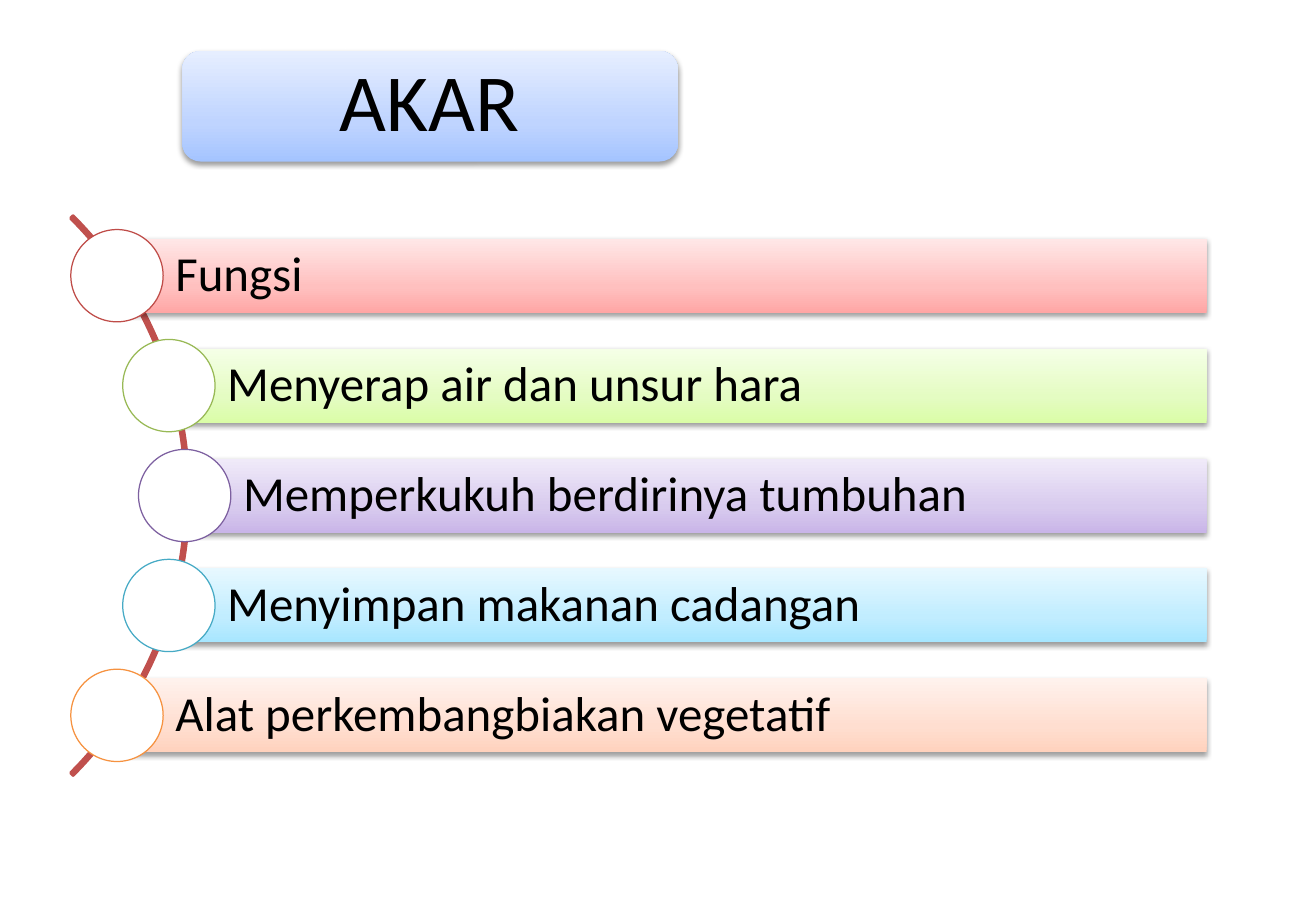
from math import sqrt

from lxml import etree
from pptx import Presentation
from pptx.dml.color import RGBColor
from pptx.enum.shapes import MSO_SHAPE
from pptx.enum.text import MSO_ANCHOR, MSO_AUTO_SIZE, PP_ALIGN
from pptx.util import Inches, Pt

RECT = MSO_SHAPE.RECTANGLE
ROUND = MSO_SHAPE.ROUNDED_RECTANGLE
OVAL = MSO_SHAPE.OVAL
ARC = MSO_SHAPE.BLOCK_ARC
MIDDLE = MSO_ANCHOR.MIDDLE
LEFT, CENTER = PP_ALIGN.LEFT, PP_ALIGN.CENTER
NS = 'xmlns:a="http://schemas.openxmlformats.org/drawingml/2006/main"'


def glow(shape, colors):
    """Give a shape a three-stop upward gradient, no line and a soft shadow."""
    stops = "".join(
        f'<a:gs pos="{pos}"><a:srgbClr val="{color}"/></a:gs>'
        for pos, color in zip((0, 35000, 100000), colors))
    props = shape._element.spPr
    props.append(etree.fromstring(
        f'<a:gradFill {NS} rotWithShape="1"><a:gsLst>{stops}</a:gsLst>'
        '<a:lin ang="16200000" scaled="0"/></a:gradFill>'))
    shape.line.fill.background()
    props.append(etree.fromstring(
        f'<a:effectLst {NS}><a:outerShdw blurRad="40000" dist="20000" '
        'dir="5400000" rotWithShape="0"><a:srgbClr val="000000">'
        '<a:alpha val="38000"/></a:srgbClr></a:outerShdw></a:effectLst>'))


def write(shape, text, size, align, left, pad):
    """Set middle-anchored text with a left inset and a pad on other sides."""
    frame = shape.text_frame
    frame.text = text
    frame.word_wrap = True
    frame.auto_size = MSO_AUTO_SIZE.NONE
    frame.vertical_anchor = MIDDLE
    frame.margin_left = Inches(left)
    frame.margin_top = frame.margin_right = frame.margin_bottom = Inches(pad)
    para = frame.paragraphs[0]
    para.alignment = align
    para.line_spacing = 0.9
    para.font.name = "Calibri"
    para.font.size = Pt(size)
    para.font.color.rgb = RGBColor.from_string("000000")


deck = Presentation()
deck.slide_width, deck.slide_height = Inches(10.83), Inches(7.5)
slide = deck.slides.add_slide(deck.slide_layouts[5])
shapes = slide.shapes

# Title on its card
card = shapes.add_shape(
    ROUND, Inches(1.5), Inches(0.42), Inches(4.08), Inches(0.91))
glow(card, ("A4C4FF", "BFD4FF", "E6EEFF"))
title = shapes.title
title.left, title.top = Inches(1.54), Inches(0.46)
title.width, title.height = Inches(3.99), Inches(0.82)
write(title, "AKAR", 48, CENTER, 0.2, 0.2)
shapes._spTree.append(title._element)  # bring in front of the card

# Curve that carries the circles
SIDE, MID_X, MID_Y = 6.51, -1.7, 4.08
curve = shapes.add_shape(
    ARC, Inches(MID_X - SIDE / 2), Inches(MID_Y - SIDE / 2),
    Inches(SIDE), Inches(SIDE))
for index, value in enumerate((189, 27, 0.004)):
    curve.adjustments[index] = value
curve.shadow.inherit = False
curve.fill.background()
curve.line.color.rgb = RGBColor.from_string("C0504D")
curve.line.width = Pt(2)

# Bars start at the circle centres, which lie on the curve
RADIUS, PITCH, RIGHT, BAR, DOT = 3.22, 0.905, 9.93, 0.61, 0.76
rows = [
    ("Fungsi", "BF4C48", ("FFA6A5", "FFC0BF", "FFE7E7")),
    ("Menyerap air dan unsur hara", "98B955",
     ("DAFDA7", "E4FCC2", "F5FFE7")),
    ("Memperkukuh berdirinya tumbuhan", "7D60A0",
     ("C9B5E8", "D8CBEE", "F0EAF9")),
    ("Menyimpan makanan cadangan", "46AAC5",
     ("A7E6FF", "C1EDFF", "E7F8FF")),
    ("Alat perkembangbiakan vegetatif", "F69240",
     ("FFD2BD", "FFDED0", "FFF2ED")),
]
for index, (text, edge, colors) in enumerate(rows):
    drop = (index - 2) * PITCH
    x, y = MID_X + sqrt(RADIUS ** 2 - drop ** 2), MID_Y + drop
    bar = shapes.add_shape(
        RECT, Inches(x), Inches(y - BAR / 2), Inches(RIGHT - x), Inches(BAR))
    glow(bar, colors)
    write(bar, text, 29, LEFT, 0.48, 0.08)
    dot = shapes.add_shape(
        OVAL, Inches(x - DOT / 2), Inches(y - DOT / 2),
        Inches(DOT), Inches(DOT))
    dot.shadow.inherit = False
    dot.fill.solid()
    dot.fill.fore_color.rgb = RGBColor.from_string("FFFFFF")
    dot.line.color.rgb = RGBColor.from_string(edge)
    dot.line.width = Pt(0.75)

deck.save("out.pptx")
